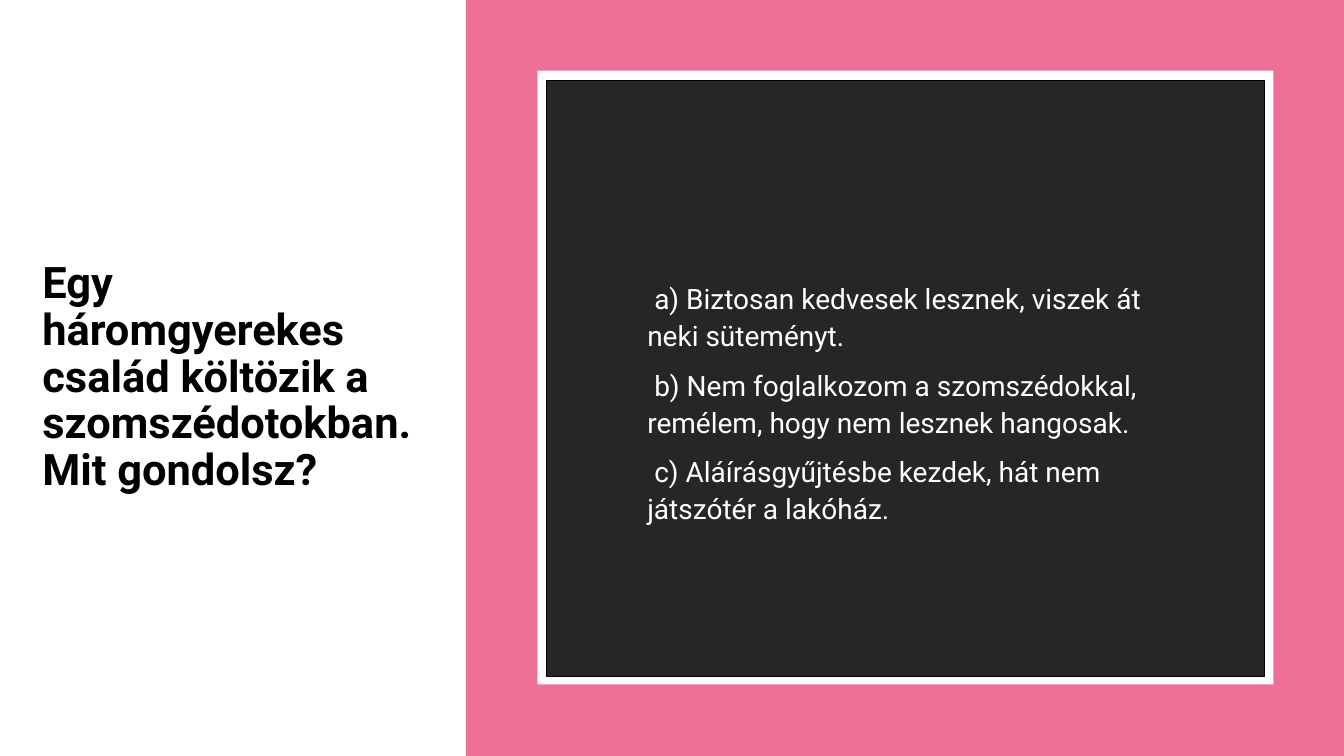
"""Build a quiz slide: a question on the left, three answers on a framed panel."""
from lxml.etree import SubElement
from pptx import Presentation
from pptx.dml.color import RGBColor as RGB
from pptx.enum.shapes import MSO_SHAPE as SHAPE
from pptx.enum.text import MSO_ANCHOR as ANCHOR, MSO_AUTO_SIZE as AUTO_SIZE, PP_ALIGN as ALIGN
from pptx.oxml.ns import qn
from pptx.util import Inches, Pt

COLORS = {"white": "FFFFFF", "black": "000000", "pink": "EE6E96", "board": "262626"}
FONT = "Roboto"

deck = Presentation()
deck.slide_width, deck.slide_height = Inches(13.33), Inches(7.5)
WIDTH, HEIGHT = deck.slide_width, deck.slide_height
slide = deck.slides.add_slide(deck.slide_layouts[1])


def area(left, top, width, height):
    """Turn percentages of the slide into lengths."""
    return [int(share * side / 100) for share, side in
            zip((left, top, width, height), (WIDTH, HEIGHT, WIDTH, HEIGHT))]


def write(holder, texts, *, box, size, color, bold=False, spacing=1.0,
          gap=0, margin=0, indent=0, top_inset=0.67):
    """Place a placeholder and fill it with formatted paragraphs."""
    holder.left, holder.top, holder.width, holder.height = area(*box)
    slide.shapes._spTree.append(holder._element)
    frame = holder.text_frame
    frame.word_wrap = True
    frame.auto_size = AUTO_SIZE.NONE
    frame.vertical_anchor = ANCHOR.MIDDLE
    frame.margin_top = int(HEIGHT * top_inset / 100)
    for number, text in enumerate(texts):
        line = frame.add_paragraph() if number else frame.paragraphs[0]
        line.text = text
        props = line._p.get_or_add_pPr()
        props.set("marL", str(int(WIDTH * margin / 100)))
        props.set("indent", str(int(WIDTH * indent / 100)))
        SubElement(props, qn("a:buNone"))
        line.alignment = ALIGN.LEFT
        line.line_spacing = spacing
        line.space_before = Pt(gap if number else 0)
        font = line.runs[0].font
        font.name, font.size, font.bold = FONT, Pt(size), bold
        font.color.rgb = RGB.from_string(COLORS[color])


panels = [
    ("white", None, (0, 0, 100, 100)),
    ("pink", None, (34.66, 0, 65.34, 100)),
    ("white", None, (39.98, 9.33, 54.76, 81.2)),
    ("board", "black", (40.66, 10.67, 53.41, 78.8)),
]
for fill, outline, box in panels:
    panel = slide.shapes.add_shape(SHAPE.RECTANGLE, *area(*box))
    panel.shadow.inherit = False
    panel.fill.solid()
    panel.fill.fore_color.rgb = RGB.from_string(COLORS[fill])
    if outline:
        panel.line.color.rgb = RGB.from_string(COLORS[outline])
        panel.line.width = Pt(1)
    else:
        panel.line.fill.background()

question, answers = slide.shapes.title, slide.placeholders[1]
write(question,
      ["Egy háromgyerekes család költözik a szomszédotokban. Mit gondolsz?"],
      box=(2.4, 17.07, 29.71, 65.87), size=31, color="black", bold=True, spacing=0.9)
write(answers,
      ["a) Biztosan kedvesek lesznek, viszek át neki süteményt.",
       "b) Nem foglalkozom a szomszédokkal, remélem, hogy nem lesznek hangosak.",
       "c) Aláírásgyűjtésbe kezdek, hát nem játszótér a lakóház."],
      box=(45.91, 19.87, 42.84, 60.13), size=20, color="white", spacing=1.1,
      gap=9, margin=1.5, indent=0.52, top_inset=7.07)

deck.save("out.pptx")
